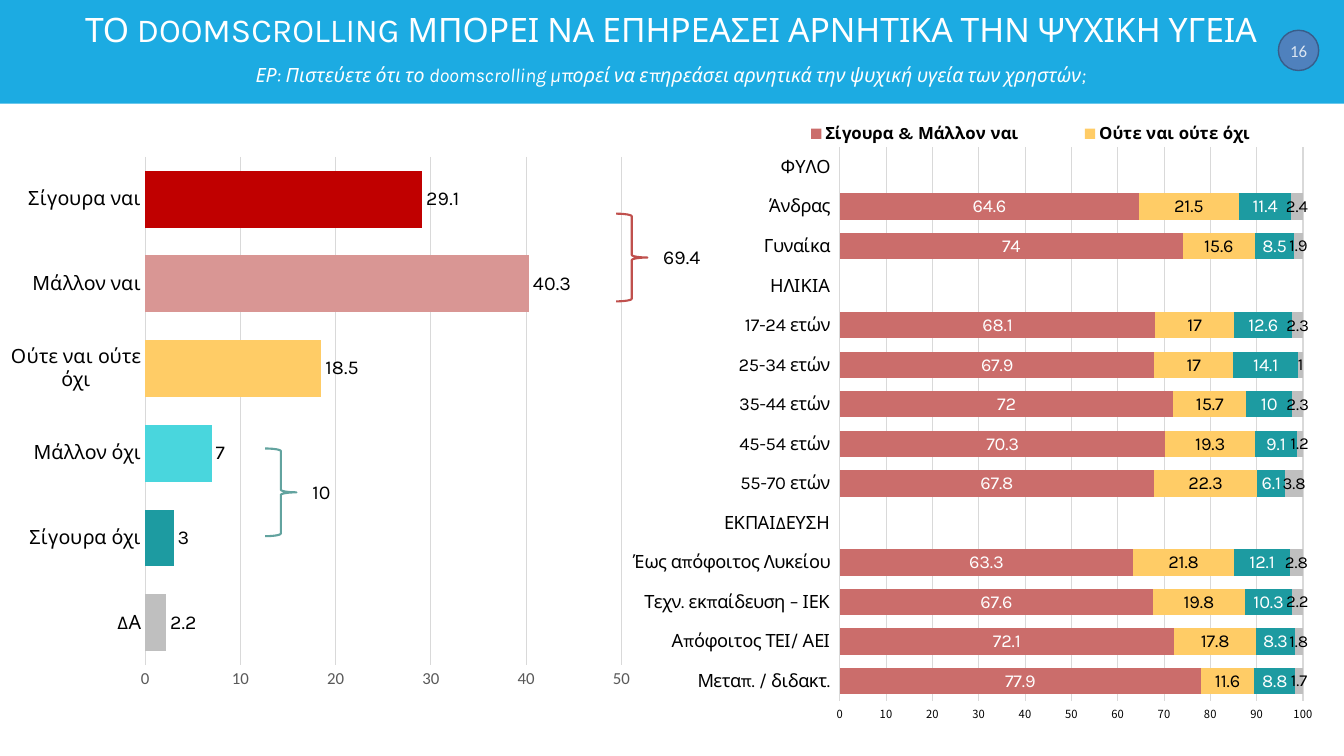
"""Build the survey slide on doomscrolling and mental health."""
from lxml.etree import SubElement
from pptx import Presentation
from pptx.chart.data import CategoryChartData
from pptx.dml.color import RGBColor
from pptx.enum.chart import (XL_CHART_TYPE, XL_LABEL_POSITION, XL_LEGEND_POSITION,
                             XL_TICK_LABEL_POSITION, XL_TICK_MARK)
from pptx.enum.shapes import MSO_SHAPE
from pptx.enum.text import MSO_ANCHOR, MSO_AUTO_SIZE, PP_ALIGN
from pptx.oxml.ns import qn
from pptx.util import Inches, Pt

TITLE = "ΤΟ DOOMSCROLLING ΜΠΟΡΕΙ ΝΑ ΕΠΗΡΕΑΣΕΙ ΑΡΝΗΤΙΚΑ ΤΗΝ ΨΥΧΙΚΗ ΥΓΕΙΑ"
QUESTION = [
    ("ΕΡ:", 14), (" ", 16),
    ("Πιστεύετε ότι το doomscrolling μπορεί να επηρεάσει αρνητικά την ψυχική υγεία των χρηστών;", 14),
]
NUMBER = "16"
ANSWERS = [
    ("Σίγουρα ναι", 29.1, "C00000"),
    ("Μάλλον ναι", 40.3, "D99694"),
    ("Ούτε ναι ούτε όχι", 18.5, "FFCC66"),
    ("Μάλλον όχι", 7, "49D6DD"),
    ("Σίγουρα όχι", 3, "1D9BA1"),
    ("ΔΑ", 2.2, "BFBFBF"),
]
GROUPS = [
    ("ΦΥΛΟ", None, None, None, None),
    ("Άνδρας", 64.6, 21.5, 11.4, 2.4),
    ("Γυναίκα", 74, 15.6, 8.5, 1.9),
    ("ΗΛΙΚΙΑ", None, None, None, None),
    ("17-24 ετών", 68.1, 17, 12.6, 2.3),
    ("25-34 ετών", 67.9, 17, 14.1, 1),
    ("35-44 ετών", 72, 15.7, 10, 2.3),
    ("45-54 ετών", 70.3, 19.3, 9.1, 1.2),
    ("55-70 ετών", 67.8, 22.3, 6.1, 3.8),
    ("ΕΚΠΑΙΔΕΥΣΗ", None, None, None, None),
    ("Έως απόφοιτος Λυκείου", 63.3, 21.8, 12.1, 2.8),
    ("Τεχν. εκπαίδευση – ΙΕΚ", 67.6, 19.8, 10.3, 2.2),
    ("Απόφοιτος ΤΕΙ/ ΑΕΙ", 72.1, 17.8, 8.3, 1.8),
    ("Μεταπ. / διδακτ.", 77.9, 11.6, 8.8, 1.7),
]
SERIES = [
    ("Σίγουρα & Μάλλον ναι", "CB6D6B", "FFFFFF", 13),
    ("Ούτε ναι ούτε όχι", "FFCC66", "000000", 13),
    ("Σίγουρα & Μάλλον όχι", "1D9BA1", "FFFFFF", 13),
    ("ΔΑ", "BFBFBF", "000000", 12),
]
BRACES = [(19.73, 59.33, "62A39F", "10"), (45.84, 28.27, "C0504D", "69.4")]
WIDTH, HEIGHT = Inches(13.33), Inches(7.5)


def rgb(color):
    return RGBColor.from_string(color)


def box(left, top, width, height):
    return [int(side * share / 100) for side, share in
            zip((WIDTH, HEIGHT, WIDTH, HEIGHT), (left, top, width, height))]


def style(font, size, color="000000", name="Karla", **extra):
    for key, value in dict(size=Pt(size), name=name, **extra).items():
        setattr(font, key, value)
    font.color.rgb = rgb(color)


def add_run(p, text, *look, **extra):
    r = p.add_run()
    r.text = text
    style(r.font, *look, **extra)


def add_shape(kind, place, fill=None, line=None, weight=1):
    sp = s.shapes.add_shape(kind, *box(*place))
    sp.shadow.inherit = False
    for part, color in ((sp.fill, fill), (sp.line.fill, line)):
        if color:
            part.solid()
            part.fore_color.rgb = rgb(color)
        else:
            part.background()
    if line:
        sp.line.width = Pt(weight)
    return sp


def set_layout(parent, index, shares, inner=False):
    for old in parent.findall(qn("c:layout")):
        parent.remove(old)
    layout = SubElement(parent, qn("c:layout"))
    parent.insert(index, layout)
    manual = SubElement(layout, qn("c:manualLayout"))
    values = [("layoutTarget", "inner")] if inner else []
    values += [("xMode", "edge"), ("yMode", "edge"), *zip("xywh", shares)]
    for tag, value in values:
        SubElement(manual, qn("c:" + tag)).set("val", str(value))


def add_bars(kind, place, cats, series, plot_share, gap, top, cat_size, value_look):
    data = CategoryChartData()
    data.categories = cats
    for name, values in series:
        data.add_series(name, values)
    chart = s.shapes.add_chart(kind, *box(*place), data).chart
    chart.has_title = chart.has_legend = False
    style(chart.font, 11)
    set_layout(chart._chartSpace.chart.plotArea, 0, plot_share, inner=True)
    plot = chart.plots[0]
    plot.gap_width, plot.vary_by_categories = gap, False
    cat, val = chart.category_axis, chart.value_axis
    for axis in (cat, val):
        axis.major_tick_mark = axis.minor_tick_mark = XL_TICK_MARK.NONE
    cat.reverse_order = True
    val._element.find(qn("c:crosses")).set("val", "max")
    val.minimum_scale, val.maximum_scale, val.major_unit = 0, top, 10
    val.has_major_gridlines = True
    val.format.line.fill.background()
    for line in (cat.format.line, val.major_gridlines.format.line):
        line.color.rgb, line.width = rgb("D9D9D9"), Pt(0.75)
    style(cat.tick_labels.font, cat_size)
    style(val.tick_labels.font, *value_look)
    return chart


def paint(item, color):
    item.format.fill.solid()
    item.format.fill.fore_color.rgb = rgb(color)


def add_labels(series, position, *look):
    labels = series.data_labels
    labels.show_value, labels.position = True, position
    style(labels.font, *look)


def add_header():
    title = s.shapes.title
    add_shape(MSO_SHAPE.RECTANGLE, (0, 0, 100, 13.73), "1CABE2")
    s.shapes._spTree.append(title._element)
    title.left, title.top, title.width, title.height = box(4.95, 0.8, 89.95, 11.73)
    tf = title.text_frame
    tf.word_wrap, tf.vertical_anchor = True, MSO_ANCHOR.MIDDLE
    tf.auto_size = MSO_AUTO_SIZE.NONE
    add_run(tf.paragraphs[0], TITLE, 24, "FFFFFF")
    p = tf.add_paragraph()
    for text, size in QUESTION:
        add_run(p, text, size, "FFFFFF", italic=True)
    for p, space in zip(tf.paragraphs, (0, 10)):
        p.alignment, p.line_spacing, p.space_before = PP_ALIGN.CENTER, 0.9, Pt(space)
    tf = add_shape(MSO_SHAPE.OVAL, (95.12, 4, 3, 5.33), "4F81BD", "385D8A").text_frame
    tf.margin_left = tf.margin_right = tf.margin_top = tf.margin_bottom = 0
    tf.word_wrap, tf.vertical_anchor = False, MSO_ANCHOR.MIDDLE
    tf.paragraphs[0].alignment = PP_ALIGN.CENTER
    add_run(tf.paragraphs[0], NUMBER, 12, "DCE6F2", "Calibri")


def add_group_chart():
    cats, *columns = zip(*GROUPS)
    chart = add_bars(XL_CHART_TYPE.BAR_STACKED, (46.51, 14, 52.06, 82), cats,
                     [(look[0], values) for look, values in zip(SERIES, columns)],
                     (0.307, 0.067, 0.662, 0.893), 50, 100, 13, (8, "000000", "Noto Sans CJK TC"))
    chart.category_axis.tick_label_position = XL_TICK_LABEL_POSITION.LOW
    chart.plots[0].overlap = 100
    for series, (_, fill, color, size) in zip(chart.plots[0].series, SERIES):
        paint(series, fill)
        add_labels(series, XL_LABEL_POSITION.CENTER, size, color)
    chart.has_legend = True
    legend = chart.legend
    legend.position, legend.include_in_layout = XL_LEGEND_POSITION.BOTTOM, False
    style(legend.font, 12, bold=True)
    set_layout(legend._element, 1, (0.18, 0.02, 0.8, 0.05))


def add_answer_chart():
    cats, values, colors = zip(*ANSWERS)
    chart = add_bars(XL_CHART_TYPE.BAR_CLUSTERED, (0.68, 17.73, 49.36, 77.2), cats,
                     [("Series 1", values)], (0.205, 0.039, 0.718, 0.871), 49, 50, 14,
                     (12, "595959", "Calibri"))
    chart.category_axis.tick_label_position = XL_TICK_LABEL_POSITION.NEXT_TO_AXIS
    series = chart.plots[0].series[0]
    for index, color in enumerate(colors):
        paint(series.points[index], color)
    add_labels(series, XL_LABEL_POSITION.OUTSIDE_END, 14)


def add_sums():
    for left, top, color, total in BRACES:
        add_shape(MSO_SHAPE.RIGHT_BRACE, (left, top, 2.33, 11.6), line=color, weight=1.5)
        tf = s.shapes.add_textbox(*box(left + 2.77, top + 3.47, 6.9, 4.53)).text_frame
        tf.word_wrap, tf.auto_size = True, MSO_AUTO_SIZE.SHAPE_TO_FIT_TEXT
        add_run(tf.paragraphs[0], total, 14)


prs = Presentation()
prs.slide_width, prs.slide_height = WIDTH, HEIGHT
s = prs.slides.add_slide(prs.slide_layouts[5])
add_header()
add_group_chart()
add_answer_chart()
add_sums()
prs.save("out.pptx")
